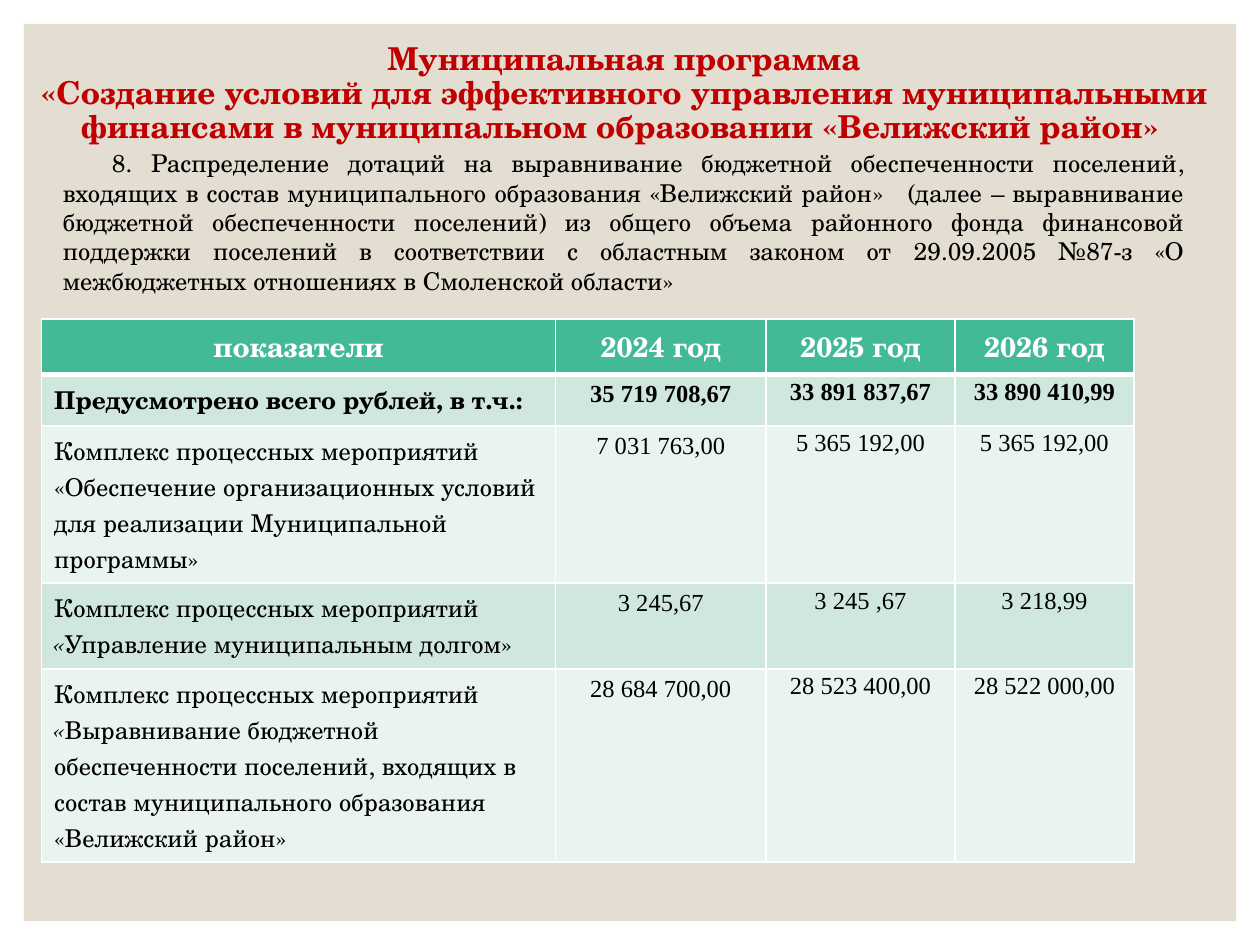
from lxml.etree import SubElement
from pptx import Presentation
from pptx.dml.color import RGBColor
from pptx.enum.shapes import MSO_SHAPE as Shape
from pptx.enum.text import MSO_ANCHOR as Anchor, PP_ALIGN as Align
from pptx.oxml.ns import qn
from pptx.util import Inches, Pt

COLORS = {
    "panel": "E3DED1", "title": "C00000", "text": "000000", "white": "FFFFFF",
    "header": "42BA97", "odd": "CFE7DD", "even": "E9F3EF",
}
SERIF, NUMERIC = "TeX Gyre Schola", "Times New Roman"

TITLE = ("Муниципальная программа\n«Создание условий для эффективного управления муниципальными "
         "финансами в муниципальном образовании «Велижский район» ")
INTRO = ("8. Распределение дотаций на выравнивание бюджетной обеспеченности поселений, "
         "входящих в состав муниципального образования «Велижский район»   (далее – выравнивание "
         "бюджетной обеспеченности поселений) из общего объема районного фонда финансовой "
         "поддержки поселений в соответствии с областным законом от 29.09.2005 №87-з "
         "«О межбюджетных отношениях в Смоленской области»")
MEASURES = "Комплекс процессных мероприятий "
ROWS = [
    (["показатели"], "2024 год", "2025 год", "2026 год"),
    (["Предусмотрено всего рублей, в т.ч.:"], "35 719 708,67", "33 891 837,67", "33 890 410,99"),
    ([MEASURES + "«Обеспечение организационных условий для реализации Муниципальной программы»"],
     "7 031 763,00", "5 365 192,00", "5 365 192,00"),
    ([MEASURES, "«", "Управление муниципальным долгом»"], "3 245,67", "3 245 ,67", "3 218,99"),
    ([MEASURES, "«", "Выравнивание бюджетной обеспеченности поселений, входящих в состав "
      "муниципального образования «Велижский район»"],
     "28 684 700,00", "28 523 400,00", "28 522 000,00"),
]
COLUMN_WIDTHS = [4.08, 1.67, 1.5, 1.42]
ROW_HEIGHTS = [0.44, 0.41, 1.24, 0.68, 1.53]
MARGIN = 0.19


def style(paragraph, size, color, font=SERIF, bold=False, align=Align.LEFT, spacing=None):
    paragraph.font.size = Pt(size)
    paragraph.font.name = font
    paragraph.font.bold = bold
    paragraph.font.color.rgb = RGBColor.from_string(COLORS[color])
    paragraph.alignment = align
    if spacing:
        paragraph.line_spacing = spacing


def add_borders(cell, header_side):
    properties = cell._tc.get_or_add_tcPr()
    for index, side in enumerate(("lnL", "lnR", "lnT", "lnB")):
        width = Pt(3 if side == header_side else 1)
        line = SubElement(properties, qn(f"a:{side}"), w=str(width))
        fill = SubElement(line, qn("a:solidFill"))
        SubElement(fill, qn("a:srgbClr"), val=COLORS["white"])
        properties.insert(index, line)


def fill_cell(cell, runs, row, column):
    header, label = row == 0, column == 0
    paragraph = cell.text_frame.paragraphs[0]
    for text in runs:
        run = paragraph.add_run()
        run.text = text
        if text == "«":
            run.font.italic = True
    if header:
        style(paragraph, 16, "white", bold=True, align=Align.CENTER)
    elif label:
        style(paragraph, 14, "text", bold=row == 1)
    else:
        style(paragraph, 14, "text", NUMERIC, row == 1, Align.CENTER, 1.15 if column > 1 else None)
        if column > 1:
            cell.margin_left = cell.margin_right = cell.margin_top = cell.margin_bottom = 0
    cell.fill.solid()
    band = "header" if header else "odd" if row % 2 else "even"
    cell.fill.fore_color.rgb = RGBColor.from_string(COLORS[band])
    add_borders(cell, {0: "lnB", 1: "lnT"}.get(row))


def main():
    deck = Presentation()
    deck.slide_width, deck.slide_height = Inches(10), Inches(7.5)
    slide = deck.slides.add_slide(deck.slide_layouts[5])

    panel = slide.shapes.add_shape(
        Shape.RECTANGLE, Inches(MARGIN), Inches(MARGIN),
        deck.slide_width - Inches(2 * MARGIN), deck.slide_height - Inches(2 * MARGIN))
    panel.shadow.inherit = False
    panel.fill.solid()
    panel.fill.fore_color.rgb = RGBColor.from_string(COLORS["panel"])
    panel.line.fill.background()
    panel._element.getparent().insert(2, panel._element)

    title = slide.shapes.title
    title.left, title.top, title.width, title.height = map(Inches, (0.08, 0.33, 9.75, 0.83))
    title.text_frame.vertical_anchor = Anchor.MIDDLE
    heading = title.text_frame.paragraphs[0]
    heading.text = TITLE
    style(heading, 18, "title", bold=True, align=Align.CENTER, spacing=0.9)

    grid = slide.shapes.add_table(
        len(ROWS), len(COLUMN_WIDTHS), Inches(0.33), Inches(2.53),
        Inches(sum(COLUMN_WIDTHS)), Inches(sum(ROW_HEIGHTS))).table
    for column, width in zip(grid.columns, COLUMN_WIDTHS):
        column.width = Inches(width)
    for row, (height, (label, *values)) in enumerate(zip(ROW_HEIGHTS, ROWS)):
        grid.rows[row].height = Inches(height)
        for column, runs in enumerate([label, *([value] for value in values)]):
            fill_cell(grid.cell(row, column), runs, row, column)

    intro = slide.shapes.add_textbox(*map(Inches, (0.4, 1.24, 9.1, 1.28))).text_frame
    intro.word_wrap = True
    intro.vertical_anchor = Anchor.MIDDLE
    intro.margin_bottom = Inches(0.29)
    summary = intro.paragraphs[0]
    summary.text = INTRO
    style(summary, 14, "text", align=Align.JUSTIFY)
    summary._p.get_or_add_pPr().set("indent", str(Inches(0.39)))

    deck.save("out.pptx")


if __name__ == "__main__":
    main()
